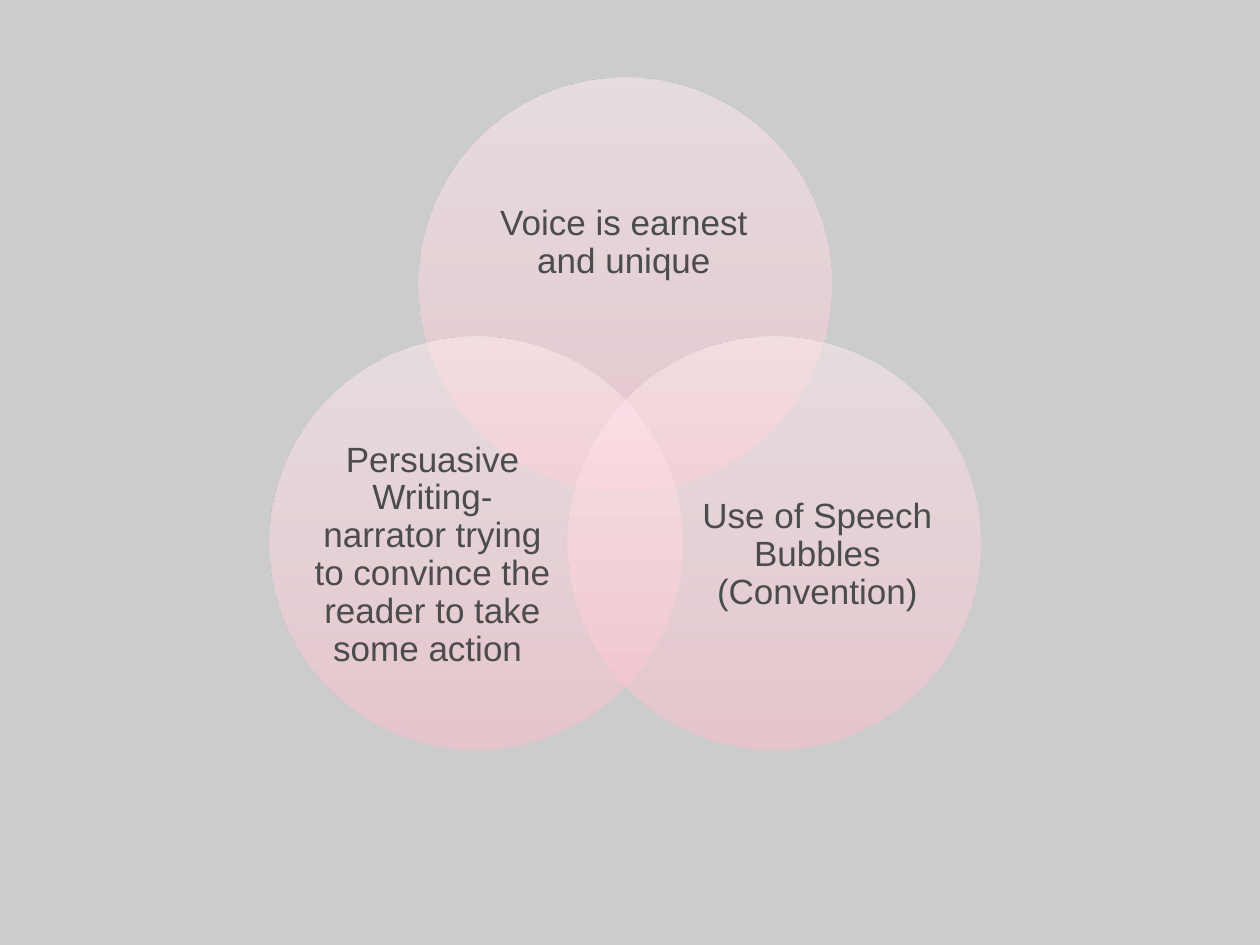
import pptx
import pptx.util
import pptx.dml.color
import pptx.enum.shapes
import pptx.enum.text
import pptx.oxml
import pptx.oxml.ns

Pt = pptx.util.Pt
RGB = pptx.dml.color.RGBColor.from_string

THEME = {
    "back": "CCCCCC",
    "ink": "4C4C4C",
    "font": "Arial",
    "size": 20,
    "lead": 0.9,
    "stops": [(0, "FFBDCD"), (35, "FFD1DB"), (100, "FFEEF1")],
    "alpha": 50,
    "angle": 270,
}

WIDE, HIGH = 720, 540
SIZE = 236
MID, TOP = 357.12, 44.64
STEP, DROP = 0.36 * SIZE, 0.625 * SIZE

RINGS = [
    {"text": "Voice is earnest and unique",
     "side": 0, "row": 0, "area": (0.13, 0.175, 0.735, 0.45)},
    {"text": "Use of Speech Bubbles (Convention)",
     "side": 1, "row": 1, "area": (0.306, 0.255, 0.6, 0.55)},
    {"text": "Persuasive Writing- narrator trying to convince the reader to take some action ",
     "side": -1, "row": 1, "area": (0.094, 0.255, 0.6, 0.55)},
]


def shade(shape):
    stops = "".join(
        f'<a:gs pos="{pos * 1000}"><a:srgbClr val="{tint}">'
        f'<a:alpha val="{THEME["alpha"] * 1000}"/></a:srgbClr></a:gs>'
        for pos, tint in THEME["stops"])
    grad = pptx.oxml.parse_xml(
        f'<a:gradFill {pptx.oxml.ns.nsdecls("a")} rotWithShape="1">'
        f'<a:gsLst>{stops}</a:gsLst>'
        f'<a:lin ang="{THEME["angle"] * 60000}" scaled="0"/></a:gradFill>')
    shape.fill.background()
    blank = shape._element.spPr.find(pptx.oxml.ns.qn("a:noFill"))
    blank.getparent().replace(blank, grad)


def add_ring(slide, left, top):
    ring = slide.shapes.add_shape(
        pptx.enum.shapes.MSO_SHAPE.OVAL, Pt(left), Pt(top), Pt(SIZE), Pt(SIZE))
    ring.shadow.inherit = False
    ring.line.fill.background()
    shade(ring)


def add_label(slide, text, left, top, area):
    x, y, w, h = (part * SIZE for part in area)
    box = slide.shapes.add_textbox(Pt(left + x), Pt(top + y), Pt(w), Pt(h))
    frame = box.text_frame
    frame.word_wrap = True
    frame.vertical_anchor = pptx.enum.text.MSO_ANCHOR.MIDDLE
    frame.margin_left = frame.margin_right = 0
    frame.margin_top = frame.margin_bottom = 0
    para = frame.paragraphs[0]
    para.alignment = pptx.enum.text.PP_ALIGN.CENTER
    para.line_spacing = THEME["lead"]
    run = para.add_run()
    run.text = text
    run.font.name = THEME["font"]
    run.font.size = Pt(THEME["size"])
    run.font.color.rgb = RGB(THEME["ink"])


def main():
    deck = pptx.Presentation()
    deck.slide_width, deck.slide_height = Pt(WIDE), Pt(HIGH)
    slide = deck.slides.add_slide(deck.slide_layouts[6])
    slide.background.fill.solid()
    slide.background.fill.fore_color.rgb = RGB(THEME["back"])
    for ring in RINGS:
        left = MID - SIZE / 2 + ring["side"] * STEP
        top = TOP + ring["row"] * DROP
        add_ring(slide, left, top)
        add_label(slide, ring["text"], left, top, ring["area"])
    deck.save("out.pptx")


if __name__ == "__main__":
    main()
